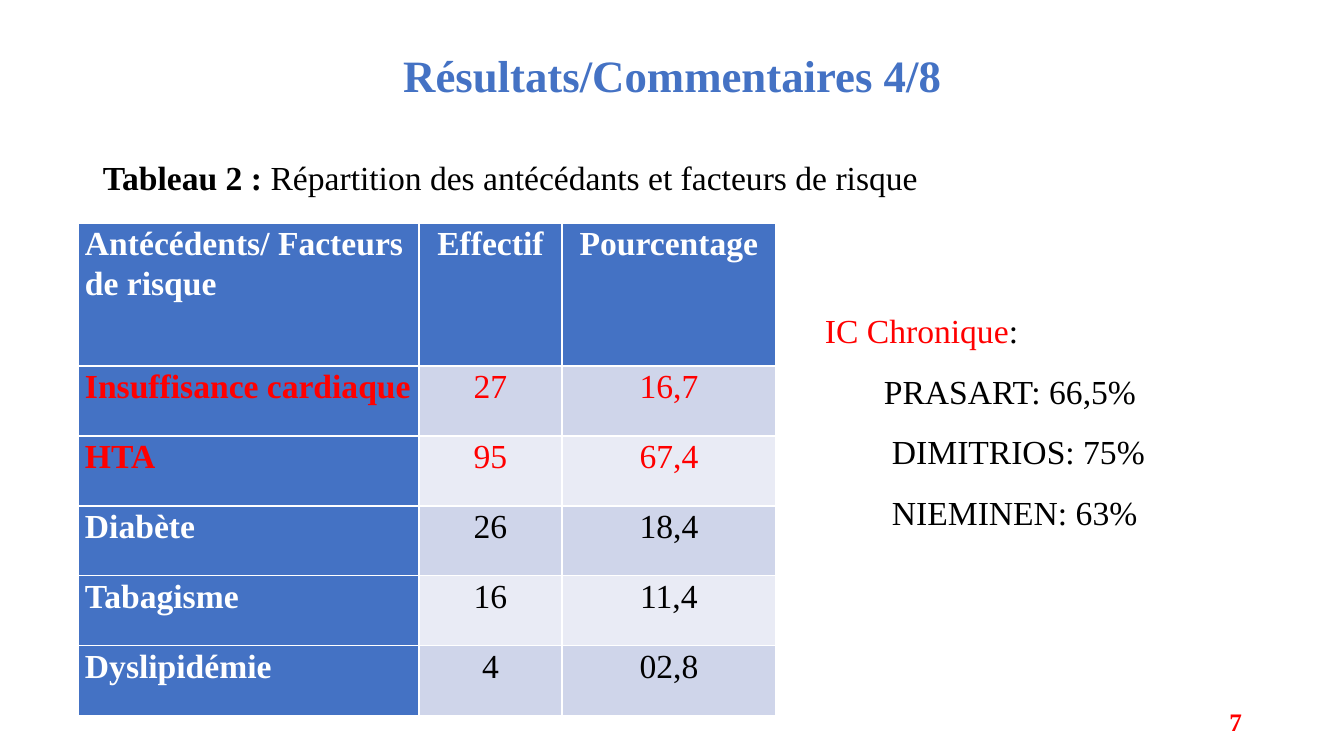
from pptx import Presentation
from pptx.dml.color import RGBColor
from pptx.enum.text import MSO_ANCHOR, PP_ALIGN
from pptx.util import Emu, Pt

LEFT, CENTER, RIGHT = PP_ALIGN.LEFT, PP_ALIGN.CENTER, PP_ALIGN.RIGHT
MIDDLE = MSO_ANCHOR.MIDDLE

FONT = "Times New Roman"
COLORS = {"blue": "4472C4", "red": "FF0000", "black": "000000",
          "white": "FFFFFF", "odd": "CFD5EA", "even": "E9EBF5"}

TITLE = "Résultats/Commentaires 4/8"
CAPTION = [("Tableau 2\u00a0: ", True),
           ("Répartition des antécédants et facteurs de risque", False)]
HEADER = ("Antécédents/ Facteurs de risque", "Effectif", "Pourcentage")
ROWS = [
    ("Insuffisance cardiaque", "27", "16,7"),
    ("HTA", "95", "67,4"),
    ("Diabète", "26", "18,4"),
    ("Tabagisme", "16", "11,4"),
    ("Dyslipidémie", "4", "02,8"),
]
HIGHLIGHTED = ("Insuffisance cardiaque", "HTA")
STUDIES_HEAD = [("IC Chronique", "red"), (":", "black")]
STUDIES = [("PRASART: 66,5%", 59), ("DIMITRIOS: 75%", 67), ("NIEMINEN: 63%", 67)]
PAGE = "7"

COL_WIDTHS = (341, 143, 214)
HEADER_HEIGHT, ROW_HEIGHT = 143, 70
CELL_MARGIN = 7


def px(n):
    return Emu(round(n * 914400 / 100.8))


def rgb(name):
    return RGBColor.from_string(COLORS[name])


def style(p, size=24, color="black", bold=False, align=LEFT, spacing=1.0):
    p.font.name, p.font.size, p.font.bold = FONT, Pt(size), bold
    p.font.color.rgb = rgb(color)
    p.alignment, p.line_spacing = align, spacing


def add_text(s, x, y, w, h):
    tf = s.shapes.add_textbox(px(x), px(y), px(w), px(h)).text_frame
    tf.word_wrap = True
    return tf


def add_title(s):
    title = s.shapes.title
    title.left, title.top, title.width, title.height = map(px, (93, 40, 1159, 76))
    tf = title.text_frame
    tf.text = TITLE
    tf.vertical_anchor = MIDDLE
    style(tf.paragraphs[0], 32, "blue", True, CENTER, 0.9)


def add_risk_table(s):
    data = [HEADER] + ROWS
    heights = [HEADER_HEIGHT] + [ROW_HEIGHT] * len(ROWS)
    table = s.shapes.add_table(len(data), len(HEADER), px(78), px(223),
                               px(sum(COL_WIDTHS)), px(sum(heights))).table
    table.first_col = True
    for column, width in zip(table.columns, COL_WIDTHS):
        column.width = px(width)
    for i, (values, height) in enumerate(zip(data, heights)):
        table.rows[i].height = px(height)
        for j, value in enumerate(values):
            cell = table.cell(i, j)
            cell.margin_left = cell.margin_right = px(CELL_MARGIN)
            cell.margin_top = cell.margin_bottom = 0
            heading = i == 0 or j == 0
            cell.fill.solid()
            cell.fill.fore_color.rgb = rgb(
                "blue" if heading else "odd" if i % 2 else "even")
            color = ("red" if values[0] in HIGHLIGHTED
                     else "white" if heading else "black")
            cell.text = value
            style(cell.text_frame.paragraphs[0], 24, color, heading,
                  CENTER if j else LEFT, 1.07)


def add_caption(s):
    p = add_text(s, 93, 152, 851, 50).paragraphs[0]
    style(p)
    for text, bold in CAPTION:
        r = p.add_run()
        r.text, r.font.bold = text, bold


def add_studies(s):
    tf = add_text(s, 815, 285, 470, 248)
    p = tf.paragraphs[0]
    style(p, spacing=1.5)
    for text, color in STUDIES_HEAD:
        r = p.add_run()
        r.text, r.font.color.rgb = text, rgb(color)
    for text, indent in STUDIES:
        p = tf.add_paragraph()
        p.text = text
        style(p, spacing=1.5)
        p._p.get_or_add_pPr().set("marL", str(px(indent)))


def add_page_number(s):
    tf = add_text(s, 1209, 701, 43, 40)
    tf.vertical_anchor = MIDDLE
    p = tf.paragraphs[0]
    p.text = PAGE
    style(p, 18, "red", True, RIGHT)


def main():
    prs = Presentation()
    prs.slide_width, prs.slide_height = px(1344), px(756)
    s = prs.slides.add_slide(prs.slide_layouts[5])
    add_title(s)
    add_risk_table(s)
    add_caption(s)
    add_studies(s)
    add_page_number(s)
    prs.save("out.pptx")


if __name__ == "__main__":
    main()
